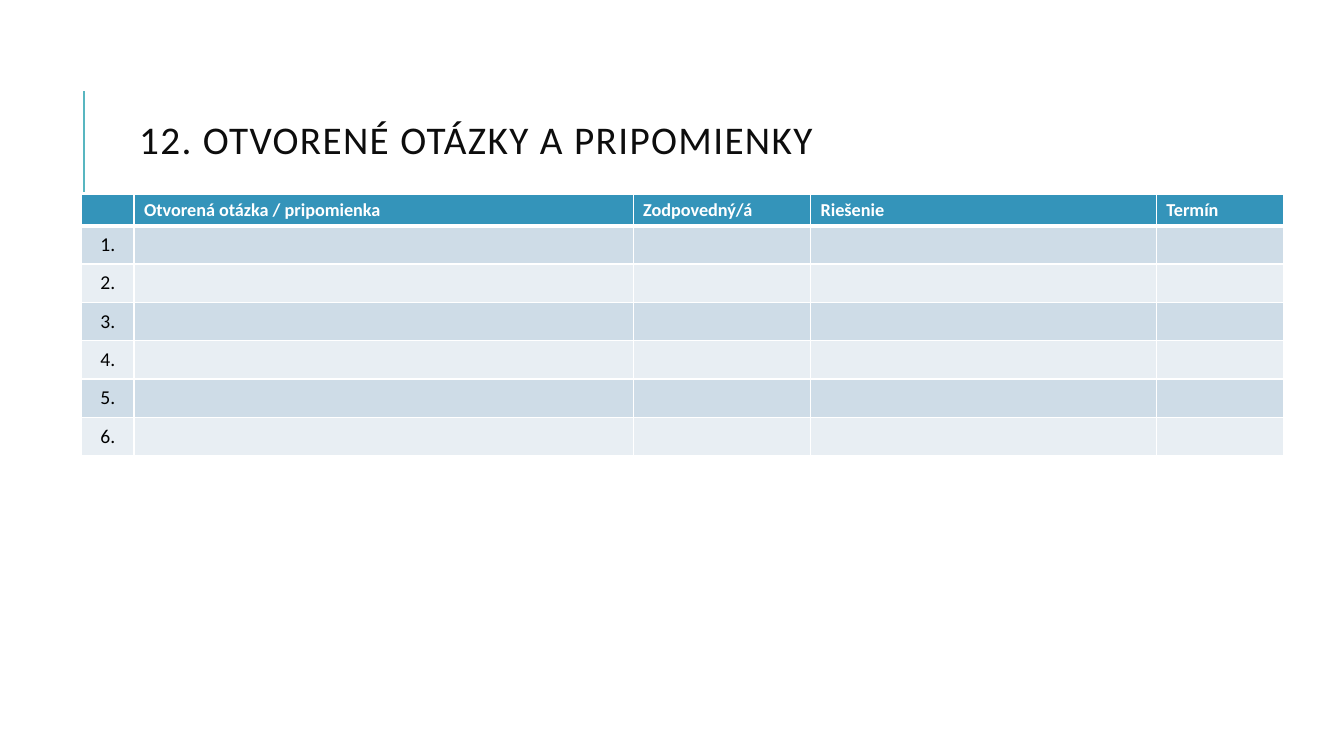
"""Build the slide of open questions and comments."""
import pptx
import pptx.util
import pptx.dml.color
import pptx.enum.shapes
import pptx.enum.text
import pptx.oxml
import pptx.oxml.ns
from dataclasses import dataclass

Inches, Pt = pptx.util.Inches, pptx.util.Pt
ALIGN = pptx.enum.text.PP_ALIGN
MIDDLE = pptx.enum.text.MSO_ANCHOR.MIDDLE

TITLE = "12. OTVORENÉ OTÁZKY A PRIPOMIENKY"
HEADS = ["", "Otvorená otázka / pripomienka", "Zodpovedný/á", "Riešenie", "Termín"]
COUNT = 6
WIDTHS = [0.52, 4.95, 1.76, 3.43, 1.26]
LEFT, TOP = 0.81, 1.93
HEAD, ROW = 0.31, 0.38


@dataclass(frozen=True)
class Theme:
    font: str = "Calibri"
    title: str = "0D0D0D"
    accent: str = "58B6C0"
    head: str = "3494BA"
    bands: tuple = ("CEDCE7", "E8EEF3")
    text: str = "000000"
    white: str = "FFFFFF"
    big: int = 28
    label: int = 13
    number: int = 14


LOOK = Theme()


def color(code):
    return pptx.dml.color.RGBColor.from_string(code)


def write(para, text, size, tint, bold=False):
    run = para.add_run()
    run.text = text
    font = run.font
    font.name, font.size, font.bold = LOOK.font, Pt(size), bold
    font.color.rgb = color(tint)
    return run


def border(cell, base):
    props = cell._tc.get_or_add_tcPr()
    for side, width in zip("LRTB", (1, 1, 1, base)):
        props.append(pptx.oxml.parse_xml(
            f'<a:ln{side} {pptx.oxml.ns.nsdecls("a")} w="{Pt(width)}"><a:solidFill>'
            f'<a:srgbClr val="{LOOK.white}"/></a:solidFill></a:ln{side}>'))


def style(cell, fill, base):
    border(cell, base)
    cell.fill.solid()
    cell.fill.fore_color.rgb = color(fill)
    cell.margin_top = cell.margin_bottom = 0
    cell.vertical_anchor = MIDDLE


def add_title(slide):
    title = slide.shapes.title
    title.left, title.top = Inches(1.38), Inches(1.01)
    title.width, title.height = Inches(10), Inches(0.82)
    frame = title.text_frame
    frame.auto_size = pptx.enum.text.MSO_AUTO_SIZE.NONE
    frame.word_wrap = True
    frame.vertical_anchor = MIDDLE
    frame.margin_left = frame.margin_right = 0
    frame.margin_top = frame.margin_bottom = 0
    para = frame.paragraphs[0]
    para.alignment, para.line_spacing = ALIGN.LEFT, 0.8
    run = write(para, TITLE, LOOK.big, LOOK.title)
    run.font._element.set("spc", "100")


def add_rule(slide):
    x = Inches(0.83)
    rule = slide.shapes.add_connector(
        pptx.enum.shapes.MSO_CONNECTOR.STRAIGHT, x, Inches(1.9), x, Inches(0.9))
    rule.line.color.rgb = color(LOOK.accent)
    rule.line.width = Pt(1.5)
    rule._element.spPr.append(pptx.oxml.parse_xml(
        f'<a:effectLst {pptx.oxml.ns.nsdecls("a")}/>'))


def add_grid(slide):
    grid = slide.shapes.add_table(
        COUNT + 1, len(HEADS), Inches(LEFT), Inches(TOP),
        Inches(sum(WIDTHS)), Inches(HEAD + COUNT * ROW)).table
    for col, width in zip(grid.columns, WIDTHS):
        col.width = Inches(width)
    for i, row in enumerate(grid.rows):
        row.height = Inches(ROW if i else HEAD)
        fill = LOOK.bands[(i - 1) % 2] if i else LOOK.head
        for cell in row.cells:
            style(cell, fill, 1 if i else 3)
    for j, head in enumerate(HEADS):
        if head:
            write(grid.cell(0, j).text_frame.paragraphs[0], head,
                  LOOK.label, LOOK.white, True)
    for i in range(1, COUNT + 1):
        para = grid.cell(i, 0).text_frame.paragraphs[0]
        para.alignment = ALIGN.CENTER
        write(para, f"{i}.", LOOK.number, LOOK.text)


def main():
    deck = pptx.Presentation()
    deck.slide_width, deck.slide_height = Inches(13.33), Inches(7.5)
    slide = deck.slides.add_slide(deck.slide_layouts[5])
    add_rule(slide)
    add_title(slide)
    add_grid(slide)
    deck.save("out.pptx")


if __name__ == "__main__":
    main()
